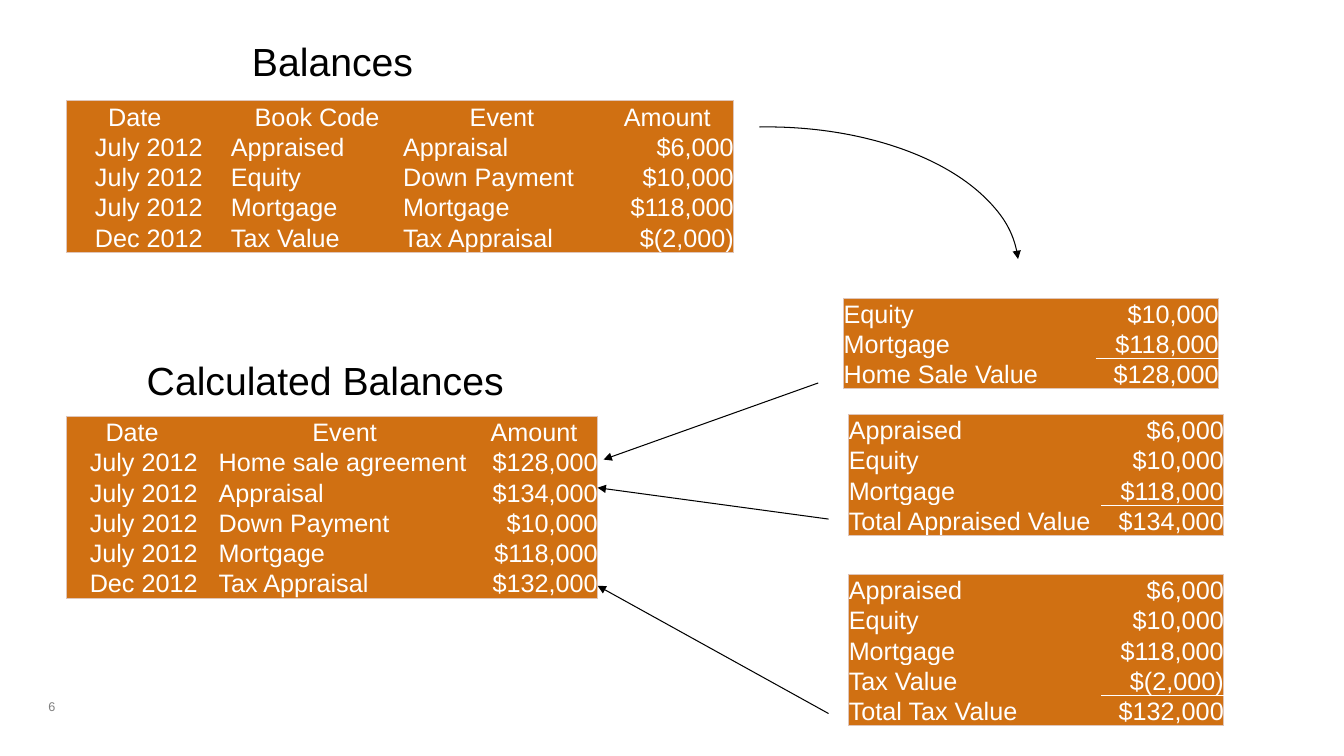
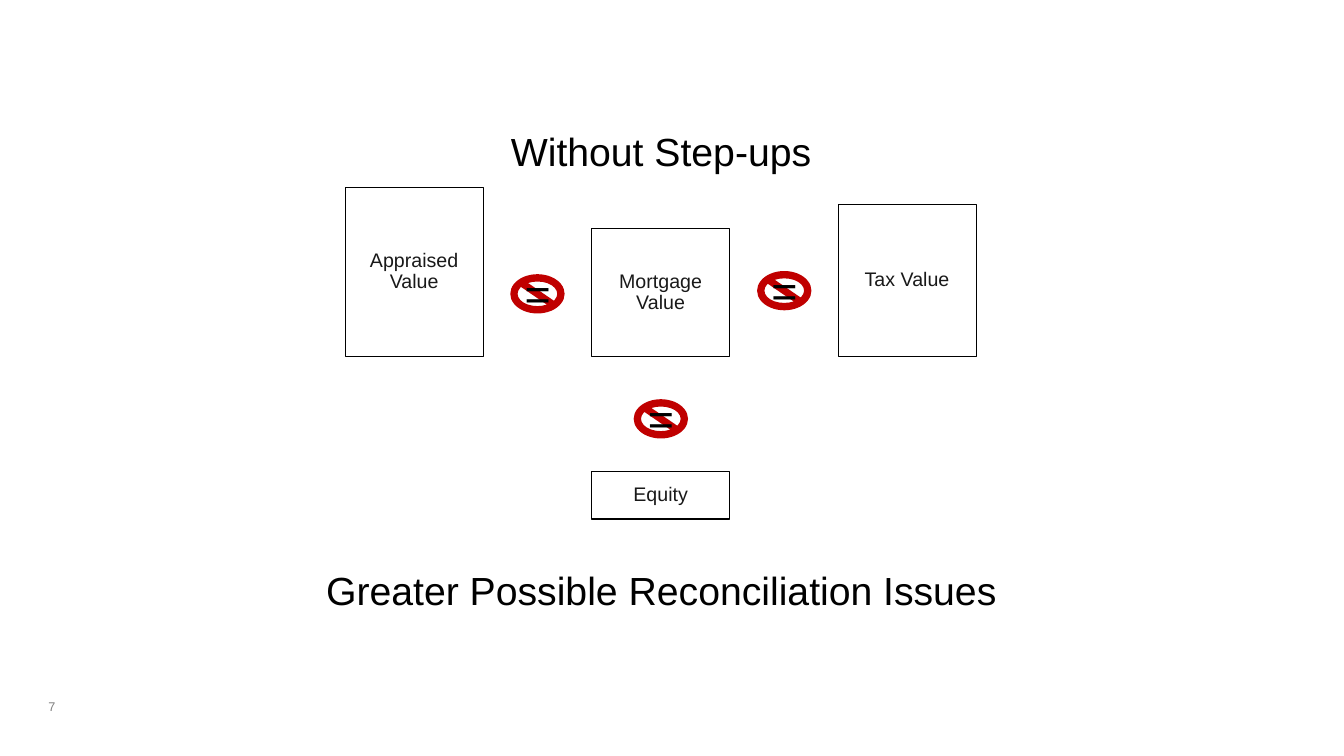
from lxml.etree import SubElement
from pptx import Presentation
from pptx.dml.color import RGBColor
from pptx.enum.shapes import MSO_CONNECTOR, MSO_SHAPE
from pptx.enum.text import MSO_ANCHOR, PP_ALIGN
from pptx.oxml.ns import qn
from pptx.util import Cm, Pt

FONT = "Arial"
BLACK = "000000"
WHITE = "FFFFFF"
GREY = "7F7F7F"
CHARCOAL = "191919"
ORANGE = "D07012"
EDGE = "DFC5B9"
RED = "C00000"
LEFT, CENTER, RIGHT = PP_ALIGN.LEFT, PP_ALIGN.CENTER, PP_ALIGN.RIGHT


def color(value):
    return RGBColor.from_string(value)


def lengths(*values):
    return [Cm(value) for value in values]


def write(frame, lines, size, ink, align=CENTER):
    for index, line in enumerate(lines):
        paragraph = frame.paragraphs[0] if index == 0 else frame.add_paragraph()
        paragraph.alignment = align
        paragraph.line_spacing = 0.9
        if not line:
            SubElement(paragraph._p, qn("a:endParaRPr"), sz=str(size * 100))
            continue
        run = paragraph.add_run()
        run.text = line
        run.font.name = FONT
        run.font.size = Pt(size)
        run.font.color.rgb = color(ink)


def clear_margins(holder):
    holder.margin_left = holder.margin_right = 0
    holder.margin_top = holder.margin_bottom = 0


def add_text(shapes, box, text, size, ink=BLACK, align=CENTER):
    frame = shapes.add_textbox(*lengths(*box)).text_frame
    frame.word_wrap = False
    write(frame, [text], size, ink, align)
    return frame


def add_heading(slide, box, text):
    add_text(slide.shapes, box, text, 28)


def add_page(presentation, number):
    slide = presentation.slides.add_slide(presentation.slide_layouts[6])
    box = (1.22, 17.65, 7.87, 0.64)
    frame = add_text(slide.shapes, box, number, 9, GREY, LEFT)
    frame.word_wrap = True
    clear_margins(frame)
    return slide


def set_border(cell, side, ink, width):
    properties = cell._tc.get_or_add_tcPr()
    line = SubElement(properties, qn(f"a:ln{side}"), w=str(Pt(width)))
    if ink is None:
        SubElement(line, qn("a:noFill"))
    else:
        fill = SubElement(line, qn("a:solidFill"))
        SubElement(fill, qn("a:srgbClr"), val=ink)


def add_ledger(slide, left, top, widths, row_height, rows, aligns, header=False):
    last_row, last_column = len(rows) - 1, len(widths) - 1
    size = lengths(left, top, sum(widths), row_height * len(rows))
    table = slide.shapes.add_table(len(rows), len(widths), *size).table
    table.first_row = table.horz_banding = False
    for column, width in zip(table.columns, widths):
        column.width = Cm(width)
    for row_index, values in enumerate(rows):
        table.rows[row_index].height = Cm(row_height)
        for column_index, value in enumerate(values):
            cell = table.cell(row_index, column_index)
            outer = {
                "L": column_index == 0,
                "R": column_index == last_column,
                "T": row_index == 0,
                "B": row_index == last_row,
            }
            sum_side = {last_row - 1: "B", last_row: "T"}.get(row_index)
            for side, is_outer in outer.items():
                if is_outer:
                    set_border(cell, side, EDGE, 0.75)
                elif not header and column_index == last_column and side == sum_side:
                    set_border(cell, side, WHITE, 1)
                else:
                    set_border(cell, side, None, 0)
            cell.fill.solid()
            cell.fill.fore_color.rgb = color(ORANGE)
            cell.vertical_anchor = MSO_ANCHOR.BOTTOM
            clear_margins(cell)
            align = CENTER if header and row_index == 0 else aligns[column_index]
            write(cell.text_frame, [value], 18, WHITE, align)


def add_event_ledger(slide, left, top, widths, rows):
    aligns = [RIGHT] + [LEFT] * (len(widths) - 2) + [RIGHT]
    spaced = [(date, "", *rest) for date, *rest in rows]
    add_ledger(slide, left, top, widths, 0.71, spaced, aligns, header=True)


def add_sum_ledger(slide, left, top, rows):
    add_ledger(slide, left, top, (6.35, 3.1), 0.76, rows, (LEFT, RIGHT))


def outline(shape):
    shape.line.color.rgb = color(BLACK)
    shape.line.width = Pt(0.75)


def add_arrowhead(shape):
    SubElement(shape.get_or_add_ln(), qn("a:tailEnd"), type="triangle")


def add_arrow(slide, start, end):
    arrow = slide.shapes.add_connector(MSO_CONNECTOR.STRAIGHT, *lengths(*start, *end))
    outline(arrow)
    add_arrowhead(arrow)
    SubElement(arrow._element.spPr, qn("a:effectLst"))


def add_curved_arrow(slide, box):
    arc = slide.shapes.add_shape(MSO_SHAPE.ARC, *lengths(*box))
    arc.shadow.inherit = False
    arc.fill.background()
    arc.adjustments[0] = 160.13
    arc.adjustments[1] = 214.77
    outline(arc)
    add_arrowhead(arc)


def add_value_box(slide, box, lines):
    shape = slide.shapes.add_shape(MSO_SHAPE.RECTANGLE, *lengths(*box))
    shape.shadow.inherit = False
    shape.fill.background()
    outline(shape)
    frame = shape.text_frame
    clear_margins(frame)
    frame.vertical_anchor = MSO_ANCHOR.MIDDLE
    write(frame, lines, 14, CHARCOAL)


def add_not_equal(slide, left, top):
    group = slide.shapes.add_group_shape()
    sign = group.shapes.add_shape(MSO_SHAPE.NO_SYMBOL, *lengths(left, top, 1.37, 0.99))
    sign.shadow.inherit = False
    sign.fill.solid()
    sign.fill.fore_color.rgb = color(RED)
    sign.line.fill.background()
    add_text(group.shapes, (left + 0.11, top - 0.19, 1.17, 1.5), "=", 32, align=LEFT)


def build_balances(presentation):
    slide = add_page(presentation, "6")
    add_heading(slide, (6.07, 0.94, 4.62, 1.35), "Balances")
    add_event_ledger(slide, 1.68, 2.54, (3.43, 0.71, 4.34, 4.98, 3.35), [
        ("Date", "Book Code", "Event", "Amount"),
        ("July 2012", "Appraised", "Appraisal", "$6,000"),
        ("July 2012", "Equity", "Down Payment", "$10,000"),
        ("July 2012", "Mortgage", "Mortgage", "$118,000"),
        ("Dec 2012", "Tax Value", "Tax Appraisal", "$(2,000)"),
    ])
    add_heading(slide, (3.38, 8.99, 9.63, 1.35), "Calculated Balances")
    add_event_ledger(slide, 1.68, 10.49, (3.3, 0.53, 6.35, 3.2), [
        ("Date", "Event", "Amount"),
        ("July 2012", "Home sale agreement", "$128,000"),
        ("July 2012", "Appraisal", "$134,000"),
        ("July 2012", "Down Payment", "$10,000"),
        ("July 2012", "Mortgage", "$118,000"),
        ("Dec 2012", "Tax Appraisal", "$132,000"),
    ])
    appraised = ("Appraised", "$6,000")
    loan = [("Equity", "$10,000"), ("Mortgage", "$118,000")]
    add_sum_ledger(slide, 21.26, 7.52, [*loan, ("Home Sale Value", "$128,000")])
    add_sum_ledger(slide, 21.39, 10.45, [
        appraised, *loan, ("Total Appraised Value", "$134,000"),
    ])
    add_sum_ledger(slide, 21.39, 14.48, [
        appraised, *loan, ("Tax Value", "$(2,000)"), ("Total Tax Value", "$132,000"),
    ])
    for start, end in (
        ((20.62, 9.65), (15.21, 11.58)),
        ((20.88, 13.08), (15.06, 12.29)),
        ((20.88, 17.98), (15.06, 14.76)),
    ):
        add_arrow(slide, start, end)
    add_curved_arrow(slide, (13, 3.2, 12.67, 7.11))


def build_step_ups(presentation):
    slide = add_page(presentation, "7")
    add_heading(slide, (12.57, 3.23, 8.18, 1.35), "Without Step-ups")
    left, step, width, baseline = 8.7, 6.21, 3.48, 8.99
    values = (
        (("Appraised", "Value"), 4.27),
        (("Mortgage", "Value"), 3.22),
        (("Tax Value",), 3.84),
    )
    for index, (lines, height) in enumerate(values):
        box = (left + step * index, baseline - height, width, height)
        add_value_box(slide, box, lines)
    add_value_box(slide, (left + step, 11.88, width, 1.2), ["Equity"])
    for sign_left, sign_top in ((12.86, 6.91), (19.08, 6.83), (15.97, 10.06)):
        add_not_equal(slide, sign_left, sign_top)
    add_heading(slide, (7.85, 14.27, 17.63, 1.35), "Greater Possible Reconciliation Issues")


def main():
    presentation = Presentation()
    presentation.slide_width, presentation.slide_height = lengths(33.87, 19.05)
    build_balances(presentation)
    build_step_ups(presentation)
    presentation.save("out.pptx")


if __name__ == "__main__":
    main()
